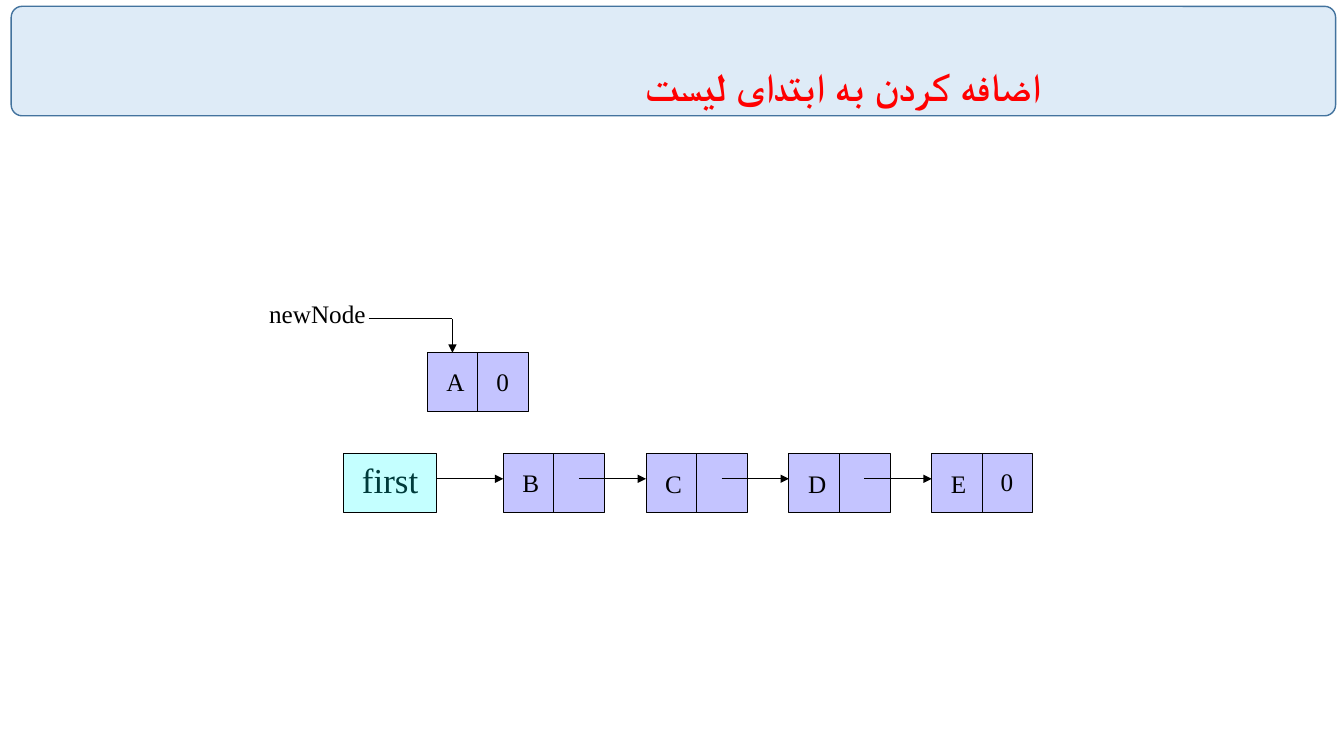
from dataclasses import dataclass

from lxml.etree import SubElement
from pptx import Presentation
from pptx.dml.color import RGBColor
from pptx.enum.shapes import MSO_CONNECTOR, MSO_SHAPE
from pptx.enum.text import MSO_ANCHOR, MSO_AUTO_SIZE, PP_ALIGN
from pptx.oxml.ns import qn
from pptx.util import Pt


@dataclass(frozen=True)
class Theme:
    banner: RGBColor = RGBColor(0xDE, 0xEB, 0xF7)
    banner_line: RGBColor = RGBColor(0x43, 0x73, 0x9E)
    title: RGBColor = RGBColor(0xFF, 0, 0)
    node: RGBColor = RGBColor(0, 0, 0xFF)
    pointer: RGBColor = RGBColor(0, 0xFF, 0xFF)
    ink: RGBColor = RGBColor(0, 0, 0)
    opacity: int = 23
    title_font: str = "Calibri"
    label_font: str = "Times New Roman"
    title_size: int = 28
    pointer_size: int = 25
    label_size: int = 18
    line: float = 0.75


THEME = Theme()
NODE_W, NODE_H = 72.4, 42.2
NODE_STEP = 102
LINK_Y = 18  # height of the links below the top of a node


def add_box(slide, shape, x, y, w, h, fill, line, width, opacity=100):
    sp = slide.shapes.add_shape(shape, Pt(x), Pt(y), Pt(w), Pt(h))
    sp.shadow.inherit = False
    sp.fill.solid()
    sp.fill.fore_color.rgb = fill
    sp.line.color.rgb = line
    sp.line.width = Pt(width)
    if opacity < 100:
        color = sp.fill._xPr.find(qn("a:solidFill"))[0]
        SubElement(color, qn("a:alpha"), val=str(opacity * 1000))
    return sp


def add_line(slide, x1, y1, x2, y2, arrow=False):
    cx = slide.shapes.add_connector(
        MSO_CONNECTOR.STRAIGHT, Pt(x1), Pt(y1), Pt(x2), Pt(y2))
    cx.line.color.rgb = THEME.ink
    cx.line.width = Pt(THEME.line)
    if arrow:
        SubElement(cx.line._get_or_add_ln(), qn("a:tailEnd"), type="triangle")
    SubElement(cx._element.spPr, qn("a:effectLst"))


def add_label(slide, text, x, y, w, h=29, size=THEME.label_size):
    tf = slide.shapes.add_textbox(Pt(x), Pt(y), Pt(w), Pt(h)).text_frame
    tf.word_wrap = False
    tf.auto_size = MSO_AUTO_SIZE.SHAPE_TO_FIT_TEXT
    r = tf.paragraphs[0].add_run()
    r.text = text
    r.font.name = THEME.label_font
    r.font.size = Pt(size)
    r.font.color.rgb = THEME.ink


def add_title(slide, text, x, y, w, h):
    """Fill the title placeholder and lay the banner behind it."""
    banner = add_box(slide, MSO_SHAPE.ROUNDED_RECTANGLE, x, y, w, h,
                     THEME.banner, THEME.banner_line, 1)
    banner.adjustments[0] = 0.1
    slide.shapes._spTree.insert(2, banner._element)

    title = slide.shapes.title
    title.left, title.top = Pt(x + 148), Pt(y + 16.5)
    title.width, title.height = Pt(594), Pt(85)
    tf = title.text_frame
    tf.word_wrap = True
    tf.auto_size = MSO_AUTO_SIZE.NONE
    tf.vertical_anchor = MSO_ANCHOR.MIDDLE
    p = tf.paragraphs[0]
    p.alignment = PP_ALIGN.RIGHT
    p.line_spacing = 0.9
    p._p.get_or_add_pPr().set("rtl", "1")
    r = p.add_run()
    r.text = text
    r.font.name = THEME.title_font
    r.font.size = Pt(THEME.title_size)
    r.font.bold = True
    r.font.color.rgb = THEME.title


def add_node(slide, x, y, value, value_dy, last):
    """Draw a value cell and a link cell: 0 in the last node, else an arrow."""
    add_box(slide, MSO_SHAPE.RECTANGLE, x, y, NODE_W, NODE_H,
            THEME.node, THEME.ink, THEME.line, THEME.opacity)
    add_line(slide, x + NODE_W / 2, y, x + NODE_W / 2, y + NODE_H)
    add_label(slide, value, x + 6.6, y + value_dy, 26.6)
    if last:
        add_label(slide, "0", x + 42.2, y + 5.8, 23.8)
    else:
        add_line(slide, x + 54, y + LINK_Y, x + NODE_STEP, y + LINK_Y, True)


def add_new_node(slide, x, y):
    add_node(slide, x, y, "A", 5.8, last=True)
    elbow_x, elbow_y = x + 18, y - 24.2
    add_line(slide, x - 41.8, elbow_y, elbow_x, elbow_y)
    add_line(slide, elbow_x, elbow_y, elbow_x, y, True)
    add_label(slide, "newNode", x - 120, y - 42.5, 83.5)


def add_list(slide, x, y):
    """Draw the first pointer and the chain of nodes it leads to."""
    width, start = 66.5, x + 114.2
    add_label(slide, "first", x + 6.2, y, 54.7, 37.4, THEME.pointer_size)
    add_box(slide, MSO_SHAPE.RECTANGLE, x, y, width, NODE_H,
            THEME.pointer, THEME.ink, THEME.line, THEME.opacity)
    add_line(slide, x + width, y + LINK_Y, start, y + LINK_Y, True)
    chain = [("B", 6.2), ("C", 7), ("D", 7), ("E", 7)]
    for i, (value, value_dy) in enumerate(chain):
        add_node(slide, start + i * NODE_STEP, y, value, value_dy,
                 last=i == len(chain) - 1)


def main():
    prs = Presentation()
    prs.slide_width, prs.slide_height = Pt(960), Pt(540)
    slide = prs.slides.add_slide(prs.slide_layouts[5])
    add_title(slide, "اضافه کردن به ابتدای ليست", 8, 4.5, 946, 78.2)
    add_new_node(slide, 305.2, 252)
    add_list(slide, 245.3, 324)
    prs.save("out.pptx")


if __name__ == "__main__":
    main()
